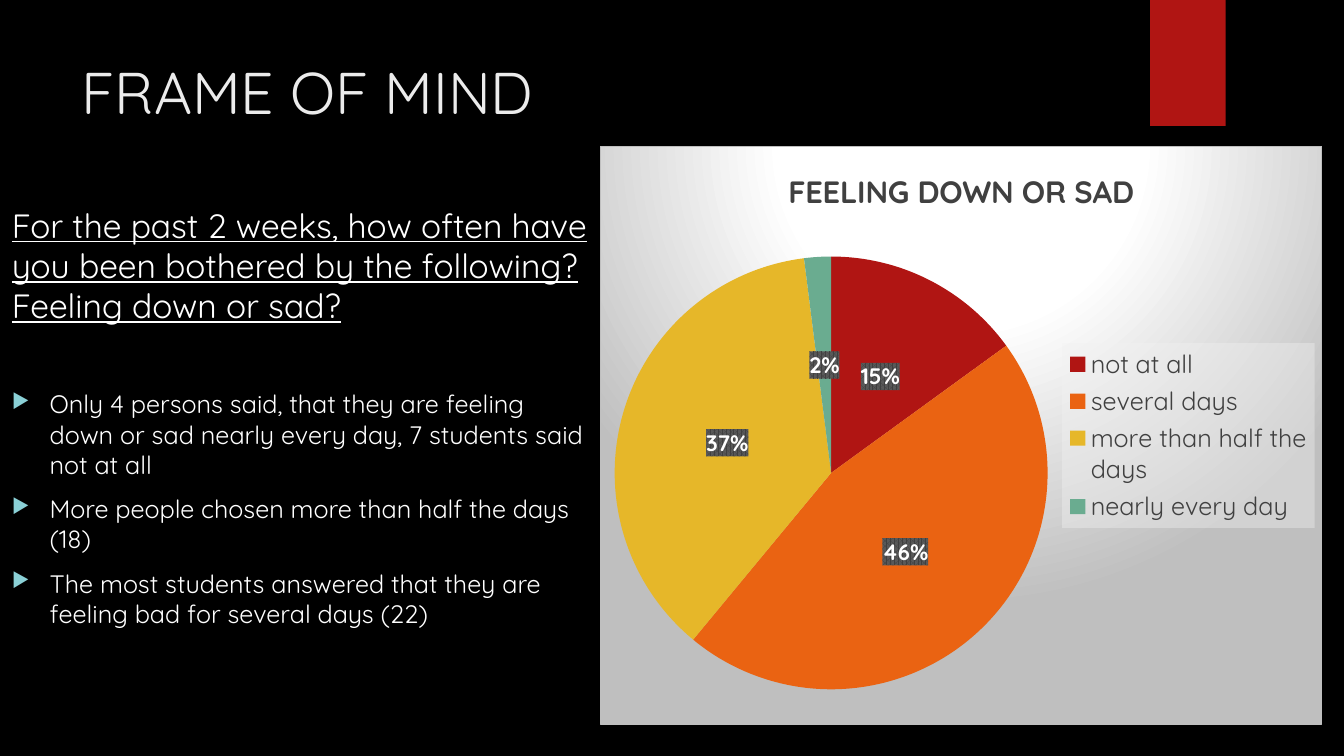
from lxml import etree
from pptx import Presentation
from pptx.chart.data import CategoryChartData
from pptx.dml.color import RGBColor
from pptx.enum.chart import XL_CHART_TYPE as ChartType
from pptx.enum.chart import XL_LABEL_POSITION as LabelPosition
from pptx.enum.chart import XL_LEGEND_POSITION as LegendPosition
from pptx.enum.shapes import MSO_SHAPE as Shape
from pptx.oxml import parse_xml
from pptx.oxml.ns import nsdecls, qn
from pptx.util import Pt

TITLE = "FRAME OF MIND"
QUESTION = ("For the past 2 weeks, how often have you been bothered by the following? "
            "Feeling down or sad?")
FINDINGS = [
    "Only 4 persons said, that they are feeling down or sad nearly every day, "
    "7 students said not at all",
    "More people chosen more than half the days (18)",
    "The most students answered that they are feeling bad for several days (22)",
]
CHART_TITLE = "FEELING DOWN OR SAD"
ANSWERS = [  # answer, percent, colour name
    ("not at all", 15, "red"),
    ("several days", 46, "orange"),
    ("more than half the days", 37, "yellow"),
    ("nearly every day", 2, "green"),
]
FONT = "Quicksand"
COLORS = {
    "background": "000000", "title": "EBEBEB", "white": "FFFFFF", "bullet": "8AD0D6",
    "red": "B01513", "orange": "EA6312", "yellow": "E6B729", "green": "6AAC90",
    "chart_text": "404040", "chart_edge": "BFBFBF", "legend": "F2F2F2",
    "label_dark": "404040", "label_light": "595959",
}
# left, top, width, height in points
RIBBON = (821.5, 0, 54, 90)
TITLE_BOX = (51.1, 36, 740.9, 110.2)
BODY_BOX = (1.4, 142.6, 427, 358.6)
CHART_BOX = (428.4, 104.4, 516.2, 413.3)
# left, top, width, height as shares of the chart
PLOT_LAYOUT = (0.02, 0.19, 0.6, 0.75)
LEGEND_LAYOUT = (0.64, 0.34, 0.35, 0.32)
INDENT = 27
PARAGRAPH_GAP = 10
QUESTION_GAP = 45


def rgb(name):
    return RGBColor.from_string(COLORS[name])


def points(box):
    return [Pt(length) for length in box]


def style(font, size, color, bold=False):
    font.name, font.size, font.bold = FONT, Pt(size), bold
    font.color.rgb = rgb(color)


def add_text_box(slide, box):
    text_frame = slide.shapes.add_textbox(*points(box)).text_frame
    text_frame.word_wrap = True
    return text_frame


def add_bullet(paragraph):
    properties = paragraph._p.get_or_add_pPr()
    properties.set("marL", str(Pt(INDENT)))
    properties.set("indent", str(-Pt(INDENT)))
    color = etree.SubElement(properties, qn("a:buClr"))
    etree.SubElement(color, qn("a:srgbClr"), val=COLORS["bullet"])
    etree.SubElement(properties, qn("a:buSzPct"), val="80000")
    etree.SubElement(properties, qn("a:buChar"), char="▶")


def manual_layout(shares, inner=False):
    target = '<c:layoutTarget val="inner"/>' if inner else ""
    modes = "".join(f'<c:{axis}Mode val="edge"/>' for axis in "xy")
    places = "".join(f'<c:{key} val="{share}"/>' for key, share in zip("xywh", shares))
    return parse_xml(f'<c:layout {nsdecls("c")}><c:manualLayout>{target}{modes}{places}'
                     '</c:manualLayout></c:layout>')


def chart_fill(fill, line='<a:ln><a:noFill/></a:ln>'):
    return parse_xml(f'<c:spPr {nsdecls("c", "a")}>{fill}{line}</c:spPr>')


def solid(name, inner=""):
    return f'<a:srgbClr val="{COLORS[name]}">{inner}</a:srgbClr>'


def set_layout(element, layout):
    for old_layout in element.findall(qn("c:layout")):
        element.remove(old_layout)
    element.insert(0, layout)


def add_body(slide):
    text_frame = add_text_box(slide, BODY_BOX)
    question = text_frame.paragraphs[0]
    question.text = QUESTION
    style(question.runs[0].font, 24, "white")
    question.runs[0].font.underline = True
    for index, finding in enumerate(FINDINGS):
        paragraph = text_frame.add_paragraph()
        paragraph.text = finding
        paragraph.space_before = Pt(PARAGRAPH_GAP if index else QUESTION_GAP)
        add_bullet(paragraph)
        style(paragraph.runs[0].font, 18, "white")


def add_pie(slide):
    data = CategoryChartData()
    data.categories = [answer for answer, _, _ in ANSWERS]
    data.add_series(CHART_TITLE, [percent for _, percent, _ in ANSWERS])
    chart = slide.shapes.add_chart(ChartType.PIE, *points(CHART_BOX), data).chart
    style(chart.font, 10, "white")

    chart.has_title = True
    chart.chart_title.text_frame.text = CHART_TITLE
    style(chart.chart_title.text_frame.paragraphs[0].runs[0].font, 22, "chart_text", True)

    plot = chart.plots[0]
    plot.vary_by_categories = True
    for index, (_, _, color) in enumerate(ANSWERS):
        fill = plot.series[0].points[index].format.fill
        fill.solid()
        fill.fore_color.rgb = rgb(color)

    labels = plot.series[0].data_labels
    labels.show_percentage, labels.show_value = True, False
    labels.number_format, labels.number_format_is_linked = "0%", False
    labels.position = LabelPosition.CENTER
    style(labels.font, 16, "white", True)
    labels._element.find(qn("c:txPr")).addprevious(chart_fill(
        f'<a:pattFill prst="pct75"><a:fgClr>{solid("label_dark")}</a:fgClr>'
        f'<a:bgClr>{solid("label_light")}</a:bgClr></a:pattFill>'))

    chart.has_legend = True
    legend = chart.legend
    legend.position, legend.include_in_layout = LegendPosition.RIGHT, False
    style(legend.font, 18, "chart_text")
    legend_element = legend._element
    for old_layout in legend_element.findall(qn("c:layout")):
        legend_element.remove(old_layout)
    legend_element.find(qn("c:legendPos")).addnext(manual_layout(LEGEND_LAYOUT))
    translucent = solid("legend", '<a:alpha val="39000"/>')
    legend_element.find(qn("c:txPr")).addprevious(
        chart_fill(f'<a:solidFill>{translucent}</a:solidFill>'))

    chart_space = chart._chartSpace
    set_layout(chart_space.chart.plotArea, manual_layout(PLOT_LAYOUT, inner=True))
    stops = "".join(f'<a:gs pos="{position}000">{solid(color)}</a:gs>' for position, color
                    in [(0, "white"), (39, "white"), (100, "chart_edge")])
    chart_space.chart.addnext(chart_fill(
        f'<a:gradFill><a:gsLst>{stops}</a:gsLst><a:path path="circle">'
        '<a:fillToRect l="50000" t="-80000" r="50000" b="180000"/></a:path></a:gradFill>',
        f'<a:ln w="{Pt(0.75)}"><a:solidFill>{solid("chart_edge")}</a:solidFill></a:ln>'))


def main():
    presentation = Presentation()
    presentation.slide_width, presentation.slide_height = Pt(960), Pt(540)
    slide = presentation.slides.add_slide(presentation.slide_layouts[6])
    slide.background.fill.solid()
    slide.background.fill.fore_color.rgb = rgb("background")

    ribbon = slide.shapes.add_shape(Shape.RECTANGLE, *points(RIBBON))
    ribbon.shadow.inherit = False
    ribbon.fill.solid()
    ribbon.fill.fore_color.rgb = rgb("red")
    ribbon.line.fill.background()

    title = add_text_box(slide, TITLE_BOX).paragraphs[0]
    title.text = TITLE
    style(title.runs[0].font, 42, "title")
    add_body(slide)
    add_pie(slide)
    presentation.save("out.pptx")


if __name__ == "__main__":
    main()
